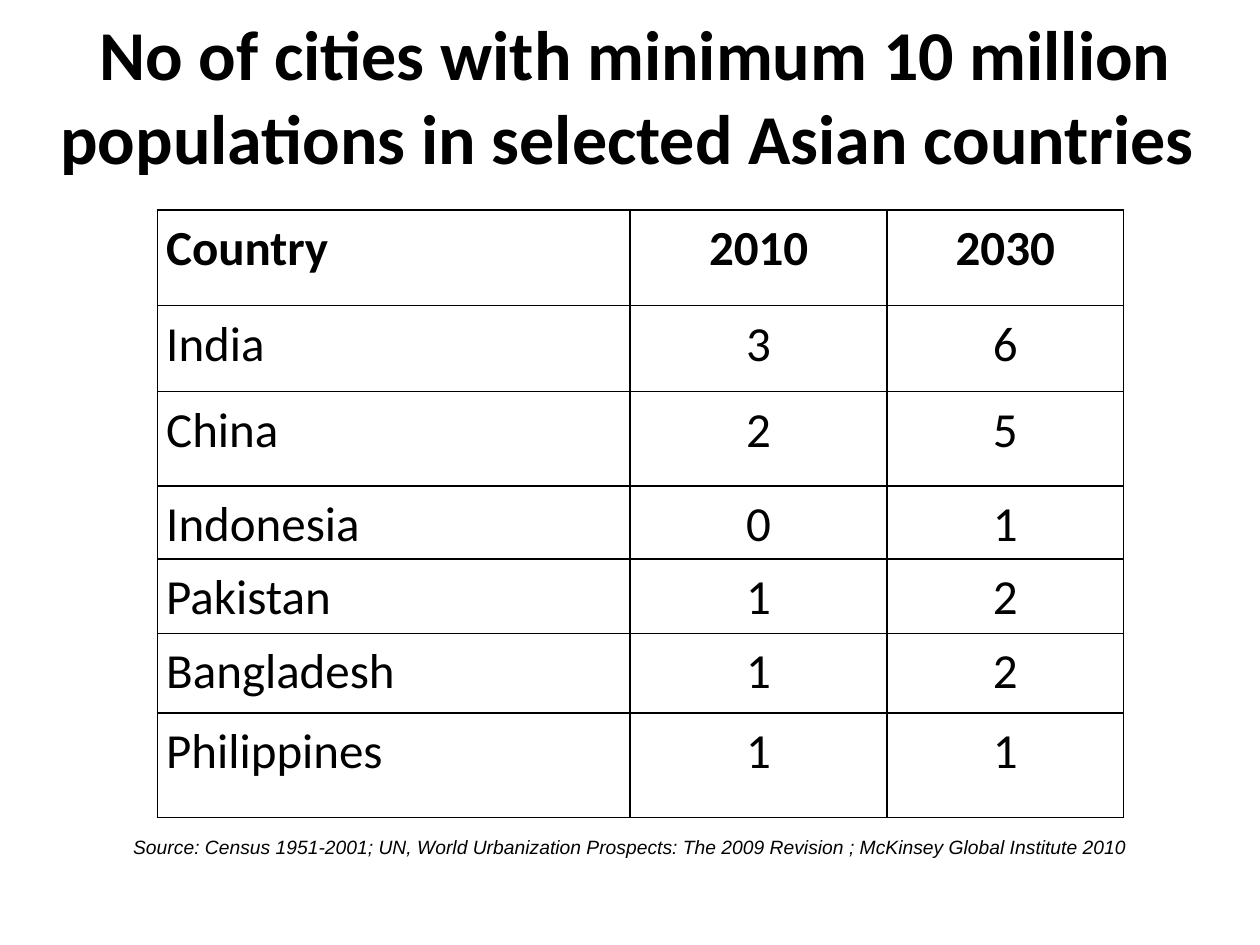
from lxml.etree import SubElement
from pptx import Presentation
from pptx.dml.color import RGBColor
from pptx.enum.text import MSO_ANCHOR as Anchor, PP_ALIGN as Align
from pptx.oxml.ns import qn
from pptx.util import Pt

BLACK = RGBColor(0, 0, 0)
COLUMN_WIDTHS = (270, 147, 135)
ROW_HEIGHTS = (54.7, 49, 54, 41.8, 42.5, 45.4, 59.8)
CITY_COUNTS = (
    ("Country", "2010", "2030"),
    ("India", "3", "6"),
    ("China", "2", "5"),
    ("Indonesia", "0", "1"),
    ("Pakistan", "1", "2"),
    ("Bangladesh", "1", "2"),
    ("Philippines", "1", "1"),
)


def write_text(frame, text, size, font="Calibri", bold=False, italic=False,
               align=Align.LEFT, line_spacing=None):
    para = frame.paragraphs[0]
    para.alignment = align
    para.line_spacing = line_spacing
    span = para.add_run()
    span.text = text
    span.font.name = font
    span.font.size = Pt(size)
    span.font.bold = bold
    span.font.italic = italic
    span.font.color.rgb = BLACK


def add_text_box(page, left, top, width, height, text, anchor=Anchor.TOP, **text_format):
    box = page.shapes.add_textbox(Pt(left), Pt(top), Pt(width), Pt(height))
    frame = box.text_frame
    frame.word_wrap = True
    frame.vertical_anchor = anchor
    write_text(frame, text, **text_format)


def add_borders(cell):
    properties = cell._tc.get_or_add_tcPr()
    for position, side in enumerate(("a:lnL", "a:lnR", "a:lnT", "a:lnB")):
        line = properties.makeelement(qn(side), {"w": str(Pt(1))})
        fill = SubElement(line, qn("a:solidFill"))
        SubElement(fill, qn("a:srgbClr"), val=str(BLACK))
        properties.insert(position, line)


def fill_cell(cell, text, **text_format):
    cell.margin_left = cell.margin_right = Pt(5)
    cell.margin_top = cell.margin_bottom = 0
    cell.fill.background()
    add_borders(cell)
    write_text(cell.text_frame, text, size=28, line_spacing=1.15, **text_format)


def add_city_table(page, left, top):
    frame = page.shapes.add_table(
        len(CITY_COUNTS), len(COLUMN_WIDTHS), Pt(left), Pt(top),
        Pt(sum(COLUMN_WIDTHS)), Pt(sum(ROW_HEIGHTS)))
    table = frame.table
    for column, width in zip(table.columns, COLUMN_WIDTHS):
        column.width = Pt(width)
    for row, height in zip(table.rows, ROW_HEIGHTS):
        row.height = Pt(height)
    for row_index, values in enumerate(CITY_COUNTS):
        for column_index, value in enumerate(values):
            fill_cell(table.cell(row_index, column_index), value,
                      bold=row_index == 0,
                      align=Align.CENTER if column_index else Align.LEFT)


def main():
    deck = Presentation()
    deck.slide_width, deck.slide_height = Pt(720), Pt(540)
    page = deck.slides.add_slide(deck.slide_layouts[6])
    add_text_box(page, 18, 24, 690, 60,
                 "No of cities with minimum 10 million populations in selected Asian countries ",
                 anchor=Anchor.MIDDLE, size=40, bold=True, align=Align.CENTER)
    add_city_table(page, 90, 120)
    add_text_box(page, 66, 474, 612, 20.6,
                 " Source: Census 1951-2001; UN, World Urbanization Prospects: "
                 "The 2009 Revision ; McKinsey Global Institute 2010",
                 size=11, font="Arial", italic=True)
    deck.save("out.pptx")


if __name__ == "__main__":
    main()
